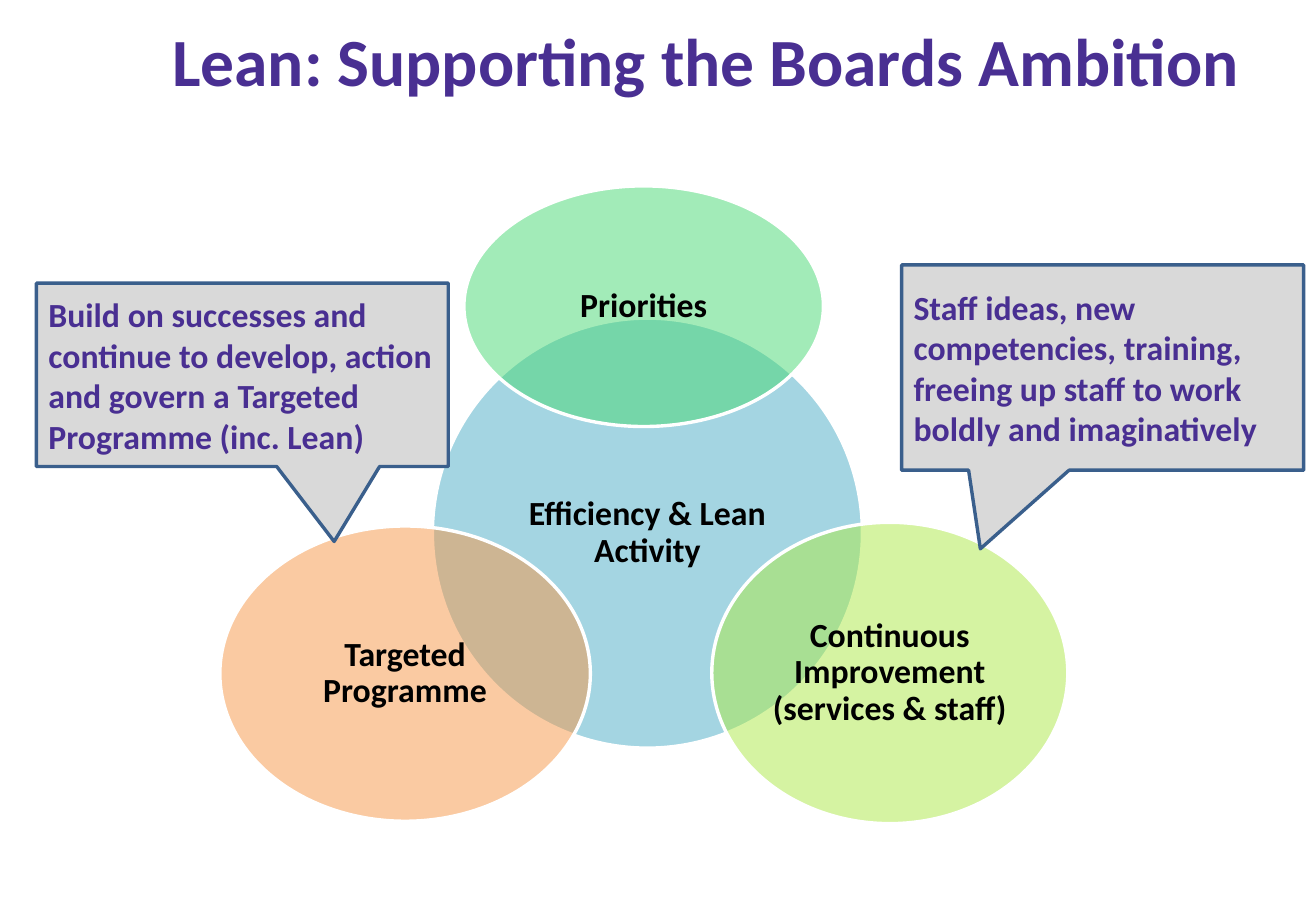
from lxml import etree
from pptx import Presentation
from pptx.dml.color import RGBColor
from pptx.enum.shapes import MSO_SHAPE
from pptx.enum.text import MSO_ANCHOR, PP_ALIGN
from pptx.oxml.ns import qn
from pptx.util import Pt

ELLIPSE = MSO_SHAPE.OVAL
CALLOUT = MSO_SHAPE.RECTANGULAR_CALLOUT
MIDDLE, TOP = MSO_ANCHOR.MIDDLE, MSO_ANCHOR.TOP
CENTER, LEFT = PP_ALIGN.CENTER, PP_ALIGN.LEFT

PURPLE, BLACK, WHITE = "492F92", "000000", "FFFFFF"
GREY, STEEL = "D9D9D9", "3A5F8C"

# label, fill, box (left, top, width, height)
CIRCLES = [
    ("Efficiency & Lean Activity", "4BACC6", (256.3, 188.6, 254.9, 254.9)),
    ("Priorities", "47D872", (275, 110.2, 213.1, 142.6)),
    ("Continuous Improvement (services & staff)", "ACE946",
     (421.9, 309.6, 211, 178.6)),
    ("Targeted Programme", "F79646", (130.3, 311.8, 219.6, 175)),
]
# text, box, pointer tip as a share of the box, from its centre
CALLOUTS = [
    ("Staff ideas, new competencies, training, freeing up staff to work "
     "boldly and imaginatively", (534.4, 157, 238.3, 121.7), (-0.304, 0.883)),
    ("Build on successes and continue to develop, action and govern a "
     "Targeted Programme (inc. Lean)", (21.6, 167.8, 244.1, 108.7),
     (0.223, 0.909)),
]


def rgb(color):
    return RGBColor.from_string(color)


class SlideBuilder:
    def __init__(self, s):
        self.s = s
        self.font = {"name": "Calibri", "bold": True}

    def label(self, sp, text, size, color, anchor, align, spacing=1.0):
        tf = sp.text_frame
        tf.word_wrap = True
        tf.vertical_anchor = anchor
        p = tf.paragraphs[0]
        p.alignment = align
        p.line_spacing = spacing
        r = p.add_run()
        r.text = text
        for key, value in {**self.font, "size": Pt(size)}.items():
            setattr(r.font, key, value)
        r.font.color.rgb = rgb(color)

    def shape(self, kind, box, fill, line):
        sp = self.s.shapes.add_shape(kind, *map(Pt, box))
        sp.shadow.inherit = False
        sp.fill.solid()
        sp.fill.fore_color.rgb = rgb(fill)
        sp.line.color.rgb = rgb(line)
        sp.line.width = Pt(2)
        return sp

    def title(self, text, box):
        sp = self.s.shapes.add_textbox(*map(Pt, box))
        self.label(sp, text, 40, PURPLE, TOP, LEFT)

    def circle(self, text, fill, box):
        """Draw a half-transparent ellipse with a centred label."""
        sp = self.shape(ELLIPSE, box, fill, WHITE)
        color = sp.element.spPr.find(qn("a:solidFill"))[0]
        etree.SubElement(color, qn("a:alpha"), val="50000")
        tf = sp.text_frame
        for side in ("left", "top", "right", "bottom"):
            setattr(tf, f"margin_{side}", Pt(2))
        self.label(sp, text, 20, BLACK, MIDDLE, CENTER, 0.9)

    def callout(self, text, box, tip):
        sp = self.shape(CALLOUT, box, GREY, STEEL)
        for i, share in enumerate(tip):
            sp.adjustments[i] = share
        self.label(sp, text, 20, PURPLE, MIDDLE, LEFT)


def main():
    prs = Presentation()
    prs.slide_width, prs.slide_height = Pt(780), Pt(540)
    slide = SlideBuilder(prs.slides.add_slide(prs.slide_layouts[6]))
    slide.title("Lean: Supporting the Boards Ambition", (95, 7.9, 691.9, 55.4))
    for circle in CIRCLES:
        slide.circle(*circle)
    for callout in CALLOUTS:
        slide.callout(*callout)
    prs.save("out.pptx")


if __name__ == "__main__":
    main()
